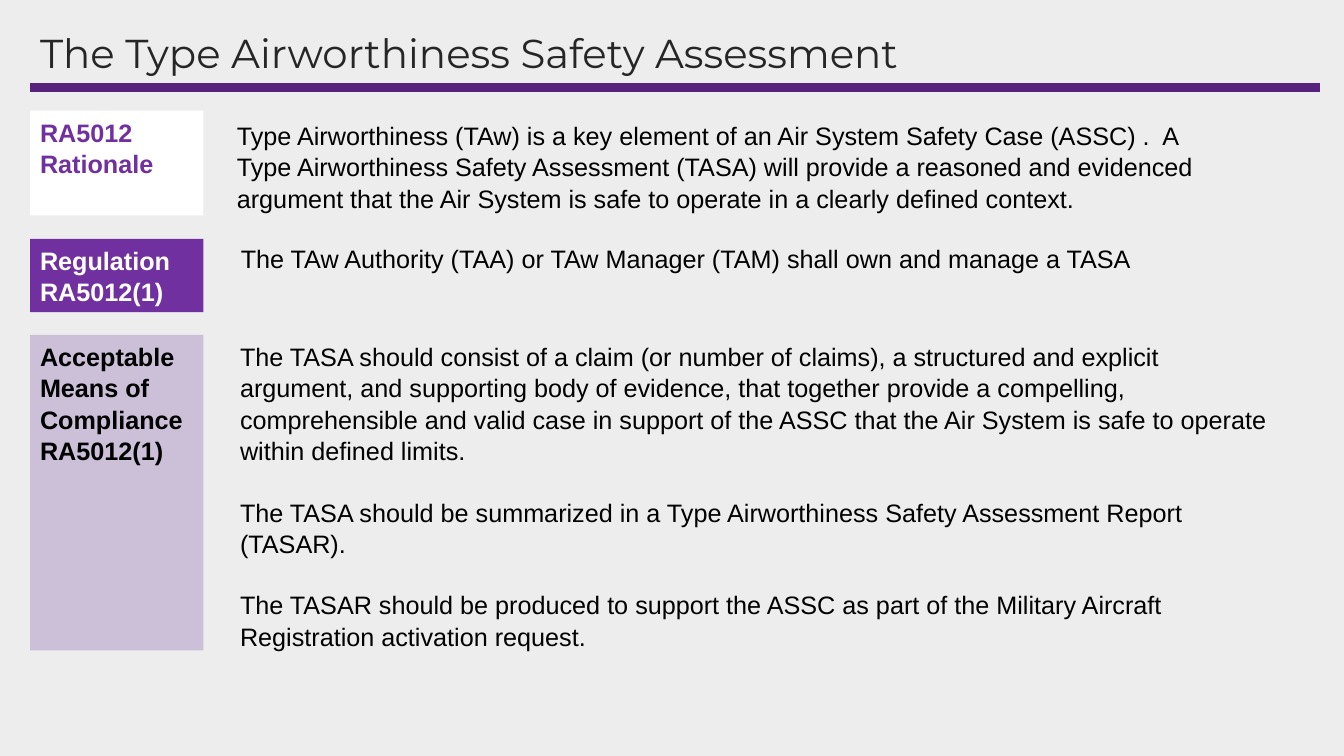
from lxml import etree
from pptx import Presentation
from pptx.dml.color import RGBColor
from pptx.enum.shapes import MSO_CONNECTOR as CONNECTOR, MSO_SHAPE as SHAPE
from pptx.enum.text import MSO_ANCHOR as ANCHOR, PP_ALIGN as ALIGN
from pptx.oxml.ns import qn
from pptx.util import Cm, Pt

LEFT = 0.76
LABEL_WIDTH = 4.37
PARAGRAPH_GAP = 21.5

# label lines, label fill, label colour, label top and height,
# body paragraphs, body left, top, width and height
SECTIONS = [
    (["RA5012", "Rationale"], "FFFFFF", "7030A0", 2.79, 2.64,
     ["Type Airworthiness (TAw) is a key element of an Air System Safety Case (ASSC) .  A Type "
      "Airworthiness Safety Assessment (TASA) will provide a reasoned and evidenced argument "
      "that the Air System is safe to operate in a clearly defined context."],
     (5.72, 2.87, 25.1, 2.57)),
    (["Regulation", "RA5012(1)"], "7030A0", "FFFFFF", 6.02, 1.85,
     ["The TAw Authority (TAA) or TAw Manager (TAM) shall own and manage a TASA"],
     (5.82, 5.97, 24.13, 1.02)),
    (["Acceptable Means of Compliance RA5012(1)"], "CCC0D8", "000000", 8.44, 7.95,
     ["The TASA should consist of a claim (or number of claims), a structured and explicit "
      "argument, and supporting body of evidence, that together provide a compelling, "
      "comprehensible and valid case in support of the ASSC that the Air System is safe to "
      "operate within defined limits.",
      "The TASA should be summarized in a Type Airworthiness Safety Assessment Report (TASAR).",
      "The TASAR should be produced to support the ASSC as part of the Military Aircraft "
      "Registration activation request."],
     (5.8, 8.44, 26.44, 7.95)),
]


def rgb(color):
    return RGBColor.from_string(color)


def write(sp, paragraphs, color="000000", size=18, font="Arial", bold=False,
          spacing=1.04, gap=0, anchor=ANCHOR.TOP):
    tf = sp.text_frame
    tf.word_wrap = True
    tf.vertical_anchor = anchor
    tf.text = "\n".join(paragraphs)
    for i, p in enumerate(tf.paragraphs):
        p.alignment = ALIGN.LEFT
        p.line_spacing = spacing
        p.space_before = Pt(gap if i else 0)
        for r in p.runs:
            r.font.name = font
            r.font.size = Pt(size)
            r.font.bold = bold
            r.font.color.rgb = rgb(color)


def add_text(slide, box, paragraphs, **style):
    write(slide.shapes.add_textbox(*map(Cm, box)), paragraphs, **style)


def add_label(slide, top, height, lines, fill, color):
    sp = slide.shapes.add_shape(SHAPE.RECTANGLE, Cm(LEFT), Cm(top), Cm(LABEL_WIDTH), Cm(height))
    sp.shadow.inherit = False
    sp.fill.solid()
    sp.fill.fore_color.rgb = rgb(fill)
    sp.line.fill.background()
    write(sp, lines, color=color, bold=True)


def add_rule(slide, left, right, y, color, width):
    line = slide.shapes.add_connector(CONNECTOR.STRAIGHT, Cm(left), Cm(y), Cm(right), Cm(y))
    line.line.color.rgb = rgb(color)
    line.line.width = Pt(width)
    etree.SubElement(line._element.spPr, qn("a:effectLst"))


def main():
    prs = Presentation()
    prs.slide_width, prs.slide_height = Cm(33.87), Cm(19.05)
    slide = prs.slides.add_slide(prs.slide_layouts[6])
    slide.background.fill.solid()
    slide.background.fill.fore_color.rgb = rgb("EDEDED")

    add_rule(slide, LEFT, 33.27, 2.21, "56227D", 6)
    add_text(slide, (LEFT, 0.71, 32.51, 1.35), ["The Type Airworthiness Safety Assessment"],
             color="262626", size=28.8, font="Montserrat", spacing=0.9, anchor=ANCHOR.MIDDLE)
    for lines, fill, color, top, height, body, box in SECTIONS:
        add_label(slide, top, height, lines, fill, color)
        add_text(slide, box, body, gap=PARAGRAPH_GAP)
    prs.save("out.pptx")


if __name__ == "__main__":
    main()
